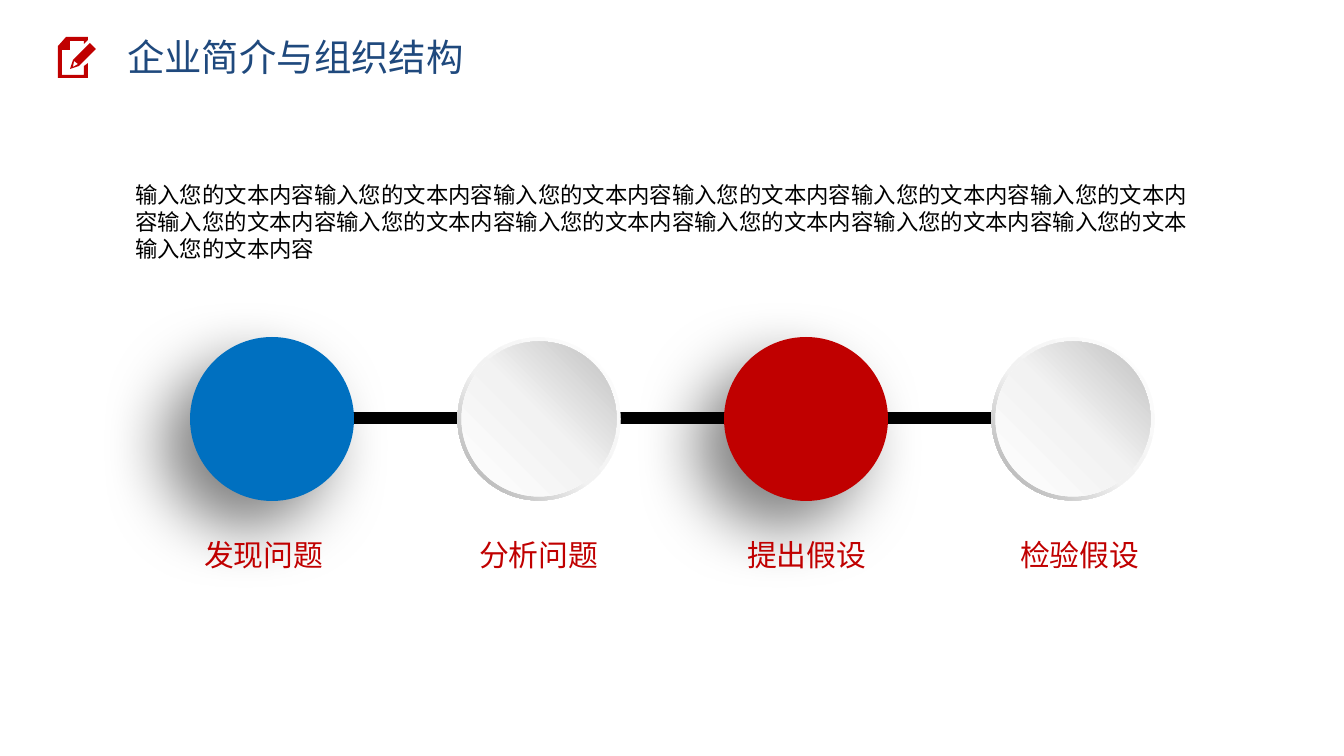
from lxml.etree import SubElement
from pptx import Presentation
from pptx.dml.color import RGBColor
from pptx.enum.shapes import MSO_CONNECTOR, MSO_SHAPE
from pptx.enum.text import MSO_AUTO_SIZE
from pptx.oxml import parse_xml
from pptx.oxml.ns import nsdecls, qn
from pptx.util import Emu, Pt

EMU_PER_PX = 914400 / 134.4
RED, BLUE, NAVY, BLACK = "C00000", "0070C0", "1F497D", "000000"
RIM_STOPS = [(0, "FFFFFF"), (55, "F2F2F2"), (100, "A6A6A6")]
FACE_STOPS = [(0, "FFFFFF"), (51, "F2F2F2"), (100, "BFBFBF")]


def px(length):
    return Emu(round(length * EMU_PER_PX))


def color(value):
    return RGBColor.from_string(value)


class Sheet:
    font_name = "Noto Sans CJK SC"

    def __init__(self, page):
        self.page = page

    def text(self, content, left, top, width, height, size, ink, wrap=True):
        box = self.page.shapes.add_textbox(px(left), px(top), px(width), px(height))
        frame = box.text_frame
        frame.word_wrap = wrap
        frame.auto_size = MSO_AUTO_SIZE.SHAPE_TO_FIT_TEXT
        para = frame.paragraphs[0]
        para.text = content
        para.font.size = Pt(size)
        para.font.name = self.font_name
        para.font.color.rgb = color(ink)
        defaults = para.font._element
        SubElement(defaults, qn("a:ea")).set("typeface", self.font_name)

    def line(self, start, end, y, width):
        bar = self.page.shapes.add_connector(
            MSO_CONNECTOR.STRAIGHT, px(start), px(y), px(end), px(y))
        bar.line.color.rgb = color(BLACK)
        bar.line.width = Pt(width)
        SubElement(bar._element.spPr, qn("a:effectLst"))

    def shape(self, shapes, kind, center_x, center_y, size):
        form = shapes.add_shape(
            kind, px(center_x - size / 2), px(center_y - size / 2), px(size), px(size))
        form.shadow.inherit = False
        form.line.fill.background()
        return form

    def shadow_disc(self, center_x, center_y, size, fill):
        disc = self.shape(self.page.shapes, MSO_SHAPE.OVAL, center_x, center_y, size)
        disc.fill.solid()
        disc.fill.fore_color.rgb = color(fill)
        effects = disc._element.spPr.find(qn("a:effectLst"))
        effects.append(parse_xml(
            f'<a:outerShdw {nsdecls("a")} blurRad="{Pt(35)}" dist="{Pt(20)}" '
            f'dir="{135 * 60000}" algn="ctr" rotWithShape="0">'
            f'<a:srgbClr val="{BLACK}"><a:alpha val="50000"/></a:srgbClr></a:outerShdw>'))

    def gradient(self, form, stops, angle):
        marks = "".join(
            f'<a:gs pos="{place * 1000}"><a:srgbClr val="{value}"/></a:gs>'
            for place, value in stops)
        form._element.spPr.find(qn("a:prstGeom")).addnext(parse_xml(
            f'<a:gradFill {nsdecls("a")} rotWithShape="1"><a:gsLst>{marks}</a:gsLst>'
            f'<a:lin ang="{angle * 60000}" scaled="0"/></a:gradFill>'))

    def button(self, center_x, center_y, size):
        group = self.page.shapes.add_group_shape()
        rim = self.shape(group.shapes, MSO_SHAPE.DONUT, center_x, center_y, size)
        rim.adjustments[0] = 0.05
        self.gradient(rim, RIM_STOPS, 135)
        face = self.shape(group.shapes, MSO_SHAPE.OVAL, center_x, center_y, size - 8)
        self.gradient(face, FACE_STOPS, 315)

    def icon(self, outlines, fill):
        group = self.page.shapes.add_group_shape()
        for contours in outlines:
            first, *holes = contours
            builder = group.shapes.build_freeform(*first[0], scale=EMU_PER_PX)
            builder.add_line_segments(first[1:], close=True)
            for hole in holes:
                builder.move_to(*hole[0])
                builder.add_line_segments(hole[1:], close=True)
            form = builder.convert_to_shape()
            form.shadow.inherit = False
            form.fill.solid()
            form.fill.fore_color.rgb = color(fill)
            form.line.fill.background()


def main():
    deck = Presentation()
    deck.slide_width, deck.slide_height = px(1344), px(756)
    sheet = Sheet(deck.slides.add_slide(deck.slide_layouts[6]))

    phrase = "输入您的文本内容"
    sheet.text(phrase * 11 + "输入您的文本" + phrase, 122, 175, 1098, 95, 12, BLACK)

    sheet.line(296, 1072, 418, 6)
    first_x, pitch, center_y = 272, 267, 419
    steps = [
        ("发现问题", 191, BLUE),
        ("分析问题", 466, None),
        ("提出假设", 734, RED),
        ("检验假设", 1007, None),
    ]
    for index, (label, label_left, fill) in enumerate(steps):
        center_x = first_x + index * pitch
        if fill:
            sheet.shadow_disc(center_x, center_y, 164, fill)
        else:
            sheet.button(center_x, center_y, 163)
    for label, label_left, fill in steps:
        sheet.text(label, label_left, 530, 146, 50, 16, RED, wrap=False)

    paper = [(84, 75), (62, 75), (62, 50), (70, 50), (70, 41), (84, 41), (84, 44),
             (88, 40), (88, 37), (66, 37), (58, 46), (58, 78), (88, 78), (88, 63),
             (84, 66)]
    pencil = [(73, 60), (70, 69), (79, 66), (96, 49), (90, 43)]
    pencil_tip = [(78, 64), (73, 67), (74, 61)]
    sheet.icon([[paper], [pencil, pencil_tip]], RED)
    sheet.text("企业简介与组织结构", 114, 28, 452, 59, 20, NAVY)

    deck.save("out.pptx")


if __name__ == "__main__":
    main()
